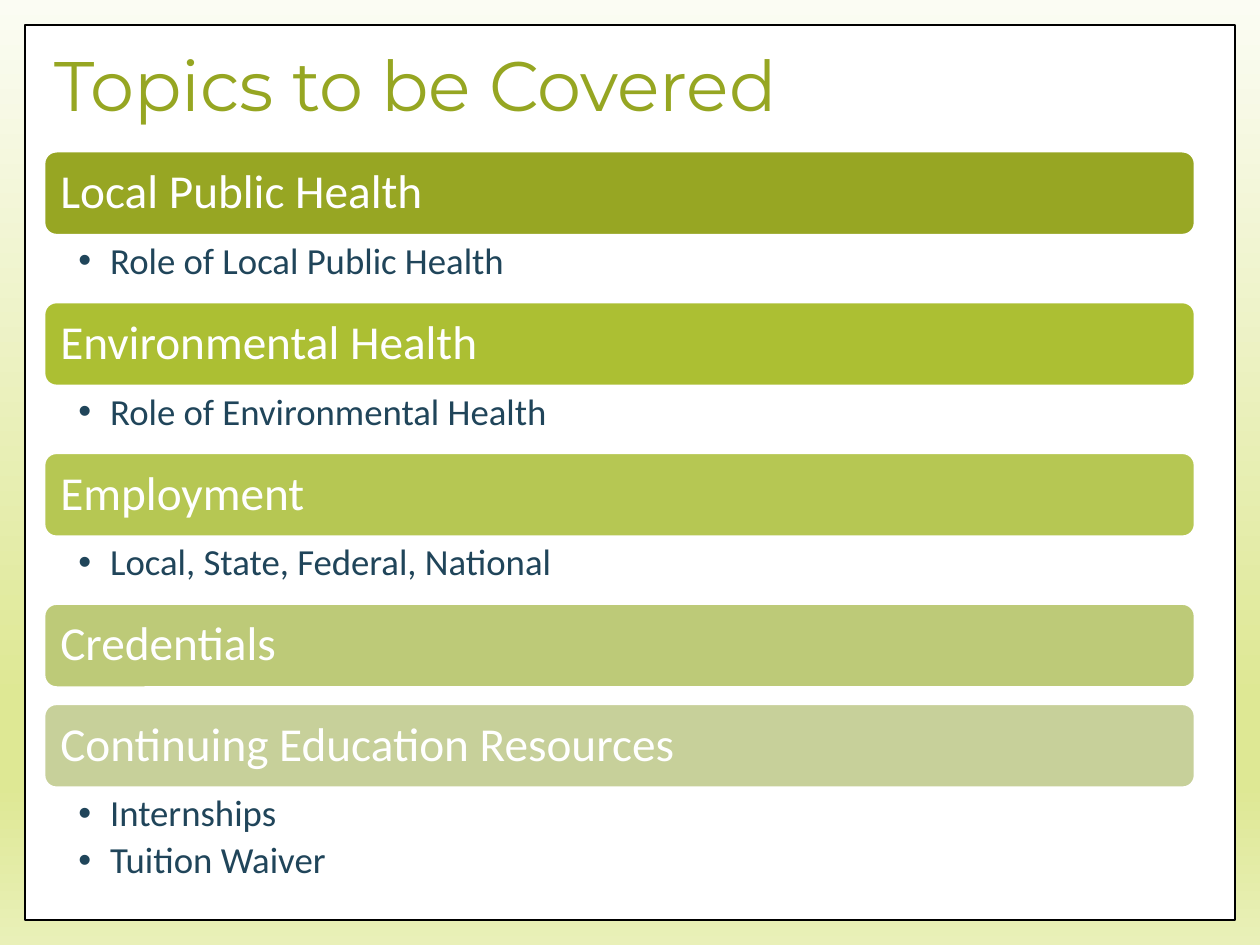
from lxml import etree
from pptx import Presentation, util as u
from pptx.dml.color import RGBColor
from pptx.enum import shapes, text
from pptx.oxml.ns import qn

TOPICS = [
    ("Local Public Health", "97A623", ["Role of Local Public Health"]),
    ("Environmental Health", "ACBF33", ["Role of Environmental Health"]),
    ("Employment", "B6C753", ["Local, State, Federal, National"]),
    ("Credentials", "BDCA78", []),
    ("Continuing Education Resources", "C7D09A", ["Internships", "Tuition Waiver"]),
]
BAR, GAP = 1.79, 0.23
NOTES = {1: 1.25, 2: 2.0}  # height of the notes by line count


def color(code):
    return RGBColor.from_string(code)


def set_font(para, name, size, code):
    para.line_spacing = 0.9
    para.font.name = name
    para.font.size = u.Pt(size)
    para.font.color.rgb = color(code)


def set_frame(frame, sides, ends, anchor):
    frame.word_wrap = True
    frame.margin_left, frame.margin_right = (u.Cm(side) for side in sides)
    frame.margin_top = frame.margin_bottom = u.Cm(ends)
    frame.vertical_anchor = anchor


def add_block(slide, kind, box, fill, line, width):
    block = slide.shapes.add_shape(kind, *map(u.Cm, box))
    block.shadow.inherit = False
    block.fill.solid()
    block.fill.fore_color.rgb = color(fill)
    block.line.color.rgb = color(line)
    block.line.width = u.Pt(width)
    return block


def add_back(slide, box):
    # Vertical gradient behind a white framed panel
    fill = slide.background.fill
    fill.gradient()
    fill.gradient_angle = 270
    stops = slide.element.find(".//" + qn("a:gsLst"))
    for stop in list(stops):
        stops.remove(stop)
    for spot, code in [(0, "FBFCF3"), (74, "DEE894"), (83, "DEE894"), (100, "E9F0B8")]:
        stop = etree.SubElement(stops, qn("a:gs"), pos=str(spot * 1000))
        etree.SubElement(stop, qn("a:srgbClr"), val=code)
    add_block(slide, shapes.MSO_SHAPE.RECTANGLE, box, "FFFFFF", "000000", 1)


def add_title(slide, box, words):
    frame = slide.shapes.add_textbox(*map(u.Cm, box)).text_frame
    set_frame(frame, (0.25, 0.25), 0.13, text.MSO_ANCHOR.MIDDLE)
    frame.text = words
    set_font(frame.paragraphs[0], "Montserrat", 40, "96A622")


def add_bar(slide, box, words, fill):
    bar = add_block(slide, shapes.MSO_SHAPE.ROUNDED_RECTANGLE, box, fill, "FFFFFF", 4.25)
    frame = bar.text_frame
    set_frame(frame, (0.29, 0.29), 0.29, text.MSO_ANCHOR.MIDDLE)
    frame.text = words
    para = frame.paragraphs[0]
    para.alignment = text.PP_ALIGN.LEFT
    set_font(para, "Calibri", 27, "FFFFFF")


def add_notes(slide, box, lines):
    frame = slide.shapes.add_textbox(*map(u.Cm, box)).text_frame
    set_frame(frame, (0.74, 0.53), 0.1, text.MSO_ANCHOR.TOP)
    frame.text = "\n".join(lines)
    for para in frame.paragraphs:
        props = para._p.get_or_add_pPr()
        props.set("marL", str(u.Cm(0.64)))
        props.set("indent", str(-u.Cm(0.64)))
        etree.SubElement(props, qn("a:buFont"), typeface="Arial")
        etree.SubElement(props, qn("a:buChar"), char="•")
        para.space_after = u.Pt(4.2)
        set_font(para, "Calibri", 21, "20455A")


def add_list(slide, left, top, width):
    # Each bar is followed by its notes, or by a small gap
    for words, fill, lines in TOPICS:
        add_bar(slide, (left, top, width, BAR), words, fill)
        top += BAR
        if lines:
            high = NOTES[len(lines)]
            add_notes(slide, (left, top, width, high), lines)
            top += high
        else:
            top += GAP


def main():
    deck = Presentation()
    deck.slide_width, deck.slide_height = u.Cm(25.4), u.Cm(19.05)
    slide = deck.slides.add_slide(deck.slide_layouts[6])
    add_back(slide, (0.5, 0.5, 24.4, 18.05))
    add_list(slide, 0.84, 3, 23.3)
    add_title(slide, (0.84, 0.84, 21.4, 1.9), "Topics to be Covered")
    deck.save("out.pptx")


if __name__ == "__main__":
    main()
